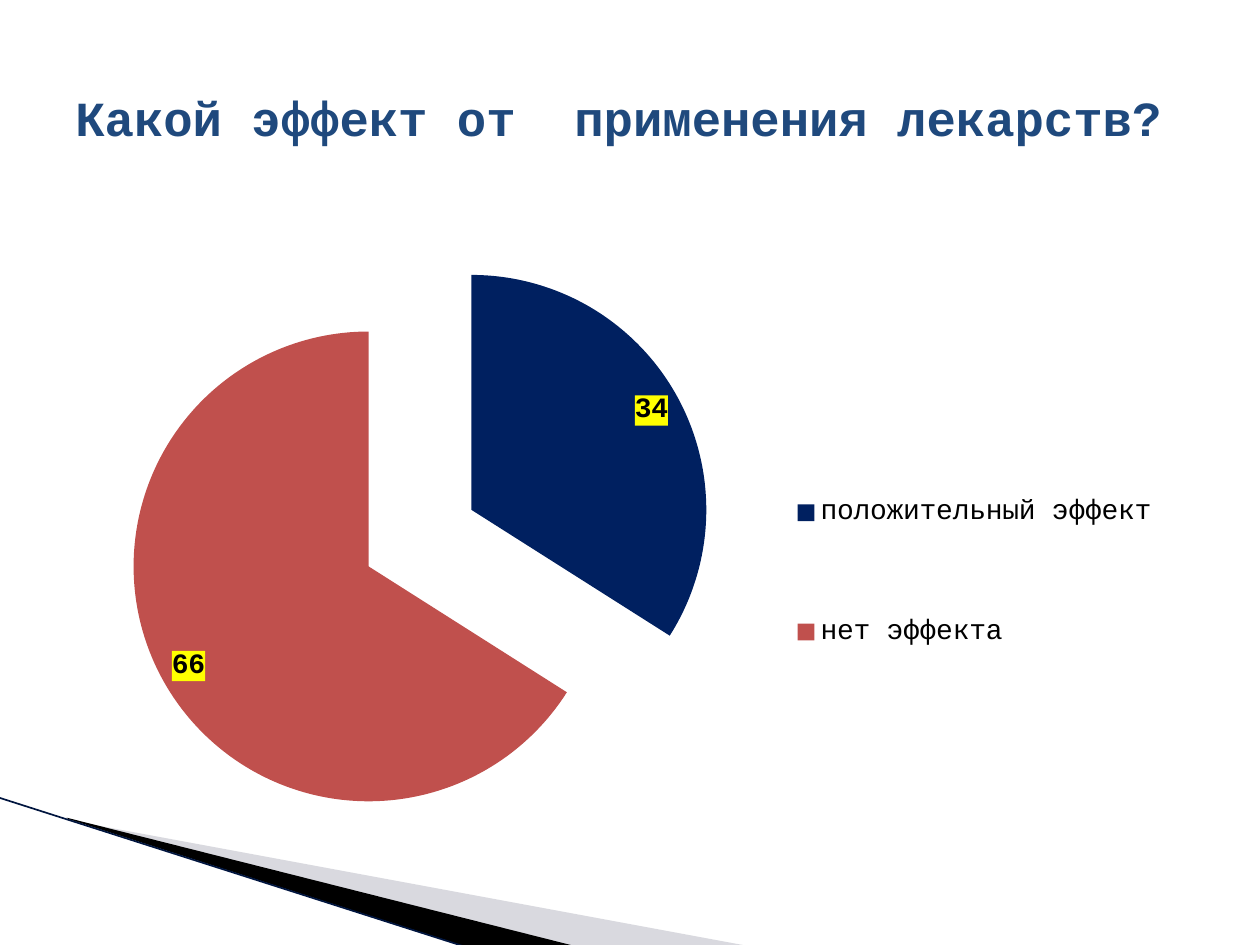
from lxml import etree
from pptx import Presentation
from pptx.chart.data import CategoryChartData
from pptx.dml.color import RGBColor
from pptx.enum.chart import XL_CHART_TYPE, XL_LABEL_POSITION, XL_LEGEND_POSITION
from pptx.enum.shapes import MSO_CONNECTOR
from pptx.enum.text import MSO_ANCHOR
from pptx.oxml import parse_xml
from pptx.oxml.ns import nsdecls, qn
from pptx.util import Inches, Pt

PIE = XL_CHART_TYPE.PIE
BEST_FIT = XL_LABEL_POSITION.BEST_FIT
RIGHT = XL_LEGEND_POSITION.RIGHT
STRAIGHT = MSO_CONNECTOR.STRAIGHT
MIDDLE = MSO_ANCHOR.MIDDLE
FONT = "Courier New"


def color(value):
    return RGBColor.from_string(value)


def manual_layout(x, y, width, height, inner=False):
    """Return a chart layout element measured in fractions of the chart."""
    target = '<c:layoutTarget val="inner"/>' if inner else ""
    return parse_xml(
        f'<c:layout {nsdecls("c")}><c:manualLayout>{target}'
        '<c:xMode val="edge"/><c:yMode val="edge"/>'
        f'<c:x val="{x}"/><c:y val="{y}"/><c:w val="{width}"/><c:h val="{height}"/>'
        "</c:manualLayout></c:layout>"
    )


deck = Presentation()
deck.slide_width, deck.slide_height = Inches(10), Inches(7.5)
page = deck.slides.add_slide(deck.slide_layouts[6])

# Corner wedges: frame, outline, fill, opacity in percent
wedges = [
    (
        (0.78, 5.47, 4.16, 1.58),
        [(0.55, 6.51), (5.95, 7.51), (4.56, 7.51), (0.55, 6.5)],
        "A1A2B0",
        40,
    ),
    (
        (-0.06, 6.33, 4.16, 0.92),
        [(0.53, 6.49), (4.57, 7.51), (3.72, 7.52), (0.54, 6.5)],
        "000000",
        100,
    ),
]
for frame, points, fill, opacity in wedges:
    corners = [(Inches(x), Inches(y)) for x, y in points]
    builder = page.shapes.build_freeform(*corners[0], scale=1.0)
    builder.add_line_segments(corners[1:], close=True)
    wedge = builder.convert_to_shape()
    # The outline reaches beyond its frame, so its points are shifted to fit
    left, top, width, height = [Inches(length) for length in frame]
    shift_x, shift_y = wedge.left - left, wedge.top - top
    outline = wedge._element.spPr.find(".//" + qn("a:path"))
    outline.set("w", str(width))
    outline.set("h", str(height))
    for point in outline.iter(qn("a:pt")):
        point.set("x", str(int(point.get("x")) + shift_x))
        point.set("y", str(int(point.get("y")) + shift_y))
    wedge.left, wedge.top, wedge.width, wedge.height = left, top, width, height
    wedge.shadow.inherit = False
    wedge.fill.solid()
    wedge.fill.fore_color.rgb = color(fill)
    wedge.line.fill.background()
    if opacity < 100:
        tint = wedge._element.spPr.find(".//" + qn("a:srgbClr"))
        etree.SubElement(tint, qn("a:alpha"), val=str(opacity * 1000))

edge = page.shapes.add_connector(
    STRAIGHT, Inches(-0.01), Inches(6.33), Inches(3.71), Inches(7.52)
)
edge.line.color.rgb = color("00153F")
edge.line.width = Pt(0.95)
etree.SubElement(edge._element.spPr, qn("a:effectLst"))

title = page.shapes.add_textbox(Inches(0.5), Inches(0.3), Inches(9), Inches(1.25))
title.text_frame.word_wrap = True
title.text_frame.vertical_anchor = MIDDLE
para = title.text_frame.paragraphs[0]
para.text = "Какой эффект от  применения лекарств?"
para.font.color.rgb = color("1F497D")

data = CategoryChartData()
data.categories = ["положительный эффект", "нет эффекта"]
data.add_series("Series 1", [34, 66])
chart = page.shapes.add_chart(
    PIE, Inches(0.17), Inches(1.67), Inches(9.17), Inches(5.42), data
).chart
chart.has_title = False
chart.font.color.rgb = color("000000")
plot = chart.plots[0]
plot.vary_by_categories = True
plot_area = chart._chartSpace.chart.plotArea
for old_layout in plot_area.findall(qn("c:layout")):
    plot_area.remove(old_layout)
plot_area.insert(0, manual_layout(0.06, 0.05, 0.57, 0.86, inner=True))

series = plot.series[0]
series._element.find(qn("c:tx")).addnext(
    parse_xml(f'<c:explosion {nsdecls("c")} val="25"/>')
)
for index, fill in enumerate(["002060", "C0504D"]):
    slice_format = series.points[index].format
    slice_format.fill.solid()
    slice_format.fill.fore_color.rgb = color(fill)
    slice_format.line.fill.background()

labels = series.data_labels
labels.show_value = True
labels.show_percentage = False
labels.position = BEST_FIT
labels.font.color.rgb = color("000000")
labels._element.find(qn("c:txPr")).addprevious(
    parse_xml(
        f'<c:spPr {nsdecls("c", "a")}><a:solidFill><a:srgbClr val="FFFF00"/>'
        "</a:solidFill></c:spPr>"
    )
)

chart.has_legend = True
legend = chart.legend
legend.position = RIGHT
legend.include_in_layout = False
legend.font.color.rgb = color("000000")
legend_element = legend._element
for old_layout in legend_element.findall(qn("c:layout")):
    legend_element.remove(old_layout)
legend_element.find(qn("c:legendPos")).addnext(manual_layout(0.66, 0.29, 0.33, 0.48))

for font, values in [
    (para.font, {"name": FONT, "size": Pt(28), "bold": True}),
    (chart.font, {"name": FONT, "size": Pt(10)}),
    (labels.font, {"name": FONT, "size": Pt(16), "bold": True}),
    (legend.font, {"name": FONT, "size": Pt(16), "bold": False}),
]:
    for name, value in values.items():
        setattr(font, name, value)

deck.save("out.pptx")
